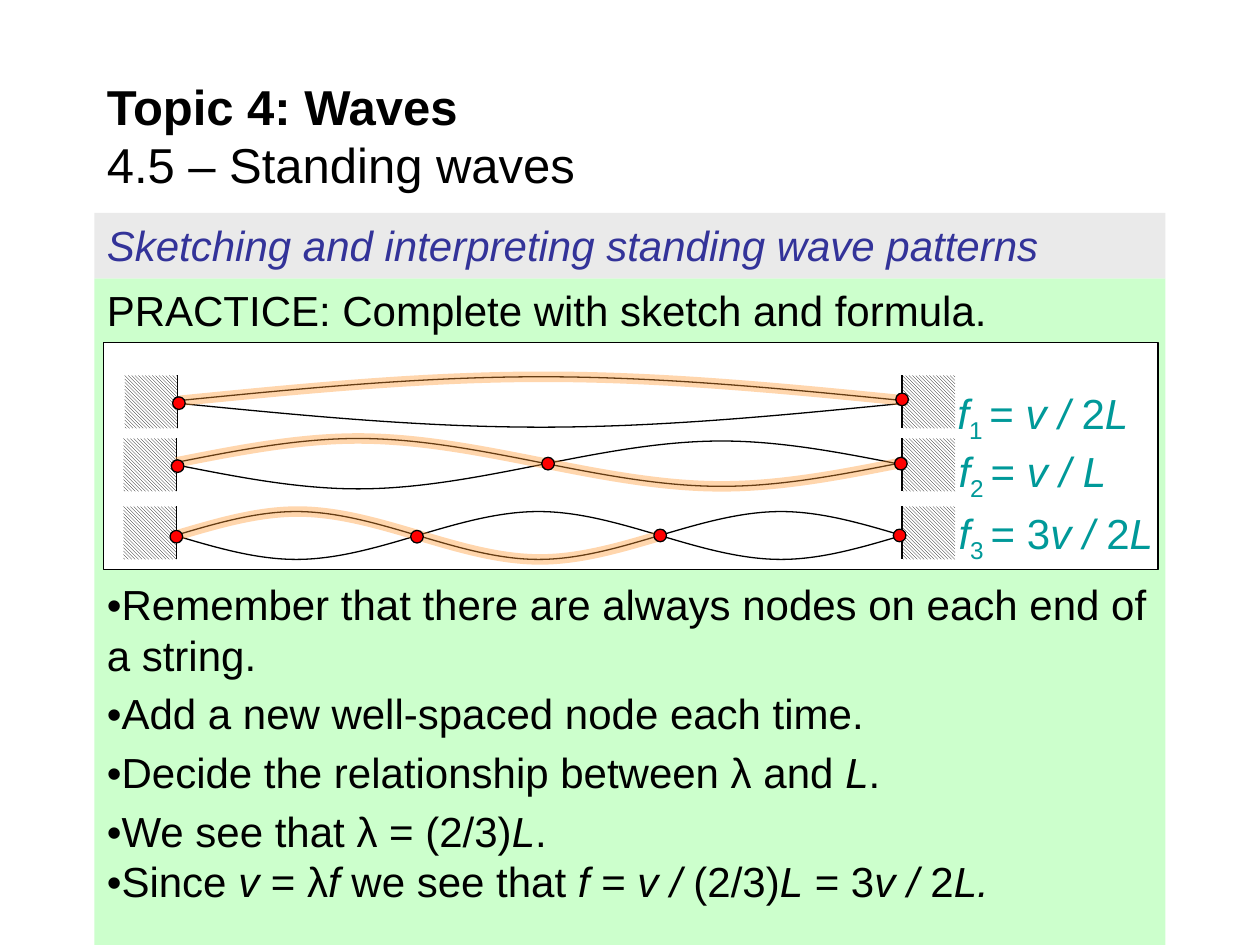
"""Build a physics practice slide on standing waves on a string."""
import lxml.etree
import pptx
import pptx.dml.color
import pptx.enum.dml
import pptx.enum.shapes
import pptx.enum.text
import pptx.oxml.ns
import pptx.util

Inches = pptx.util.Inches
Pt = pptx.util.Pt
qn = pptx.oxml.ns.qn

COLORS = {
    "black": "000000", "white": "FFFFFF", "green": "CCFFCC", "gray": "EAEAEA",
    "indigo": "333399", "teal": "009999", "orange": "FF9933", "red": "FF0000",
}
TITLE = [[("Topic 4: Waves", "b"), ("", "break"), ("4.5 – Standing waves", "")]]
HEADING = [[("Sketching and interpreting standing wave patterns", "i")]]
PRACTICE = [
    [("PRACTICE: Complete with sketch and formula.", "")],
    [("•Remember that there are always nodes on each end of a string.", "")],
    [("•Add a new well-spaced node each time.", "")],
    [("•Decide the relationship between λ and ", ""), ("L", "i"), (".", "")],
    [("•We see that λ = (2/3)", ""), ("L", "i"), (".", "")],
    [("•Since ", ""), ("v", "i"), (" = λ", ""), ("f", "i"), (" we see that ", ""),
     ("f", "i"), (" = ", ""), ("v / ", "i"), ("(2/3)", ""), ("L", "i"),
     (" = 3", ""), ("v / ", "i"), ("2", ""), ("L.", "i")],
]
PRACTICE_GAPS = [0, 139.2, 4.8, 4.8, 4.8, 0]
HARMONICS = [
    {"loops": 1, "marked": 1, "left": 1.41, "middle": (3.18, 3.2), "wall": 2.98,
     "wall_edge": 1.41, "shift": 0.02, "nodes": [(1.42, 3.2), (7.16, 3.17)],
     "place": (7.5, 3.02, 1.75, 0.5),
     "formula": [("f", "i"), ("1 ", "s"), ("= ", ""), ("v / ", "i"), ("2", ""), ("L", "i")]},
    {"loops": 2, "marked": 2, "left": 1.4, "middle": (3.67, 3.69), "wall": 3.48,
     "wall_edge": 1.4, "shift": 0, "nodes": [(1.41, 3.7), (4.35, 3.68), (7.15, 3.68)],
     "place": (7.51, 3.48, 1.57, 0.5),
     "formula": [("f", "i"), ("2 ", "s"), ("= ", ""), ("v / L", "i")]},
    {"loops": 3, "marked": 2, "left": 1.39, "middle": (4.25, 4.25), "wall": 4.02,
     "wall_edge": 1.4, "shift": 0.01,
     "nodes": [(1.4, 4.26), (3.31, 4.26), (5.24, 4.25), (7.14, 4.25)],
     "place": (7.51, 3.97, 1.57, 0.5),
     "formula": [("f", "i"), ("3 ", "s"), ("=", "")]},
]
ANSWER = [[("3", ""), ("v / ", "i"), ("2", ""), ("L", "i")]]
WAVE_WIDTH, AMPLITUDE = 5.77, 0.19
WALL_SIZE, RIGHT_EDGE, NODE_SIZE = 0.42, 7.16, 0.1


def rgb(name):
    return pptx.dml.color.RGBColor.from_string(COLORS[name])


def add_text(shape, lines, color="black", size=24, gaps=None, anchor="TOP",
             align="LEFT", inset=0.05):
    frame = shape.text_frame
    settings = {"word_wrap": True, "margin_top": Inches(inset),
                "vertical_anchor": getattr(pptx.enum.text.MSO_ANCHOR, anchor)}
    for name, value in settings.items():
        setattr(frame, name, value)
    for index, spans in enumerate(lines):
        para = frame.add_paragraph() if index else frame.paragraphs[0]
        layout = {"alignment": getattr(pptx.enum.text.PP_ALIGN, align),
                  "line_spacing": Pt(size * 1.2),
                  "space_before": Pt(gaps[index] if gaps else 0)}
        for name, value in layout.items():
            setattr(para, name, value)
        for text, style in spans:
            if style == "break":
                para.add_line_break()
                continue
            span = para.add_run()
            span.text = text
            font = {"name": "Arial", "size": Pt(size),
                    "bold": style == "b", "italic": style == "i"}
            for name, value in font.items():
                setattr(span.font, name, value)
            span.font.color.rgb = rgb(color)
            if style == "s":
                span.font._element.set("baseline", "-25000")


def add_text_box(page, place, lines, **options):
    box = page.shapes.add_textbox(*map(Inches, place))
    add_text(box, lines, **options)


def add_block(page, kind, place, fill, outlined=False):
    preset = getattr(pptx.enum.shapes.MSO_SHAPE, kind)
    shape = page.shapes.add_shape(preset, *map(Inches, place))
    shape.shadow.inherit = False
    shape.fill.solid()
    shape.fill.fore_color.rgb = rgb(fill)
    if outlined:
        shape.line.color.rgb = rgb("black")
        shape.line.width = Pt(0.75)
    else:
        shape.line.fill.background()
    return shape


def add_wall(page, left, top, edge):
    wall = add_block(page, "RECTANGLE", (left, top, WALL_SIZE, WALL_SIZE), "white")
    wall.fill.patterned()
    wall.fill.pattern = pptx.enum.dml.MSO_PATTERN.LIGHT_DOWNWARD_DIAGONAL
    wall.fill.fore_color.rgb = rgb("black")
    wall.fill.back_color.rgb = rgb("white")
    line = page.shapes.add_connector(
        pptx.enum.shapes.MSO_CONNECTOR.STRAIGHT,
        *map(Inches, (edge, top, edge, top + WALL_SIZE)))
    line.line.color.rgb = rgb("black")
    line.line.width = Pt(0.75)
    lxml.etree.SubElement(line._element.spPr, qn("a:effectLst"))


def round_segments(wave):
    segments = list(wave._element.iter(qn("a:lnTo")))
    points = [(int(point.get("x")), int(point.get("y")))
              for point in wave._element.iter(qn("a:pt"))]
    for index, segment in enumerate(segments):
        (x0, y0), (x1, y1) = points[index:index + 2]
        half = (y0 + y1) // 2
        first, second = (y0, half) if index % 2 else (half, y1)
        third = (x1 - x0) // 3
        curve = lxml.etree.Element(qn("a:cubicBezTo"))
        for x, y in ((x0 + third, first), (x1 - third, second), (x1, y1)):
            lxml.etree.SubElement(curve, qn("a:pt"), x=str(x), y=str(y))
        segment.getparent().replace(segment, curve)


def add_wave(page, left, middle, loops, total, sign, marker=False):
    points = []
    for quarter in range(2 * loops + 1):
        height = sign * AMPLITUDE * (0, 1, 0, -1)[quarter % 4]
        points.append((Inches(left + WAVE_WIDTH * quarter / (2 * total)),
                       Inches(middle - height)))
    builder = page.shapes.build_freeform(*points[0])
    builder.add_line_segments(points[1:], close=False)
    wave = builder.convert_to_shape()
    round_segments(wave)
    wave.shadow.inherit = False
    wave.fill.background()
    wave.line.color.rgb = rgb("orange" if marker else "black")
    wave.line.width = Pt(6 if marker else 0.75)
    if marker:
        color = wave.line._ln.find(".//" + qn("a:srgbClr"))
        lxml.etree.SubElement(color, qn("a:alpha")).set("val", "40000")


def add_harmonic(page, row):
    loops, left, edge = row["loops"], row["left"], row["wall_edge"]
    upper, lower = row["middle"]
    add_wall(page, edge - WALL_SIZE, row["wall"], edge)
    add_wall(page, RIGHT_EDGE, row["wall"], RIGHT_EDGE)
    add_wave(page, left, upper, loops, loops, 1)
    add_wave(page, left, lower, loops, loops, -1)
    add_wave(page, left + row["shift"], upper, row["marked"], loops, 1, marker=True)
    for x, y in row["nodes"]:
        place = (x - NODE_SIZE / 2, y - NODE_SIZE / 2, NODE_SIZE, NODE_SIZE)
        add_block(page, "OVAL", place, "red", outlined=True)
    add_text_box(page, row["place"], [row["formula"]], color="teal", inset=0.11)


def main():
    deck = pptx.Presentation()
    deck.slide_width, deck.slide_height = Inches(10), Inches(7.5)
    page = deck.slides.add_slide(deck.slide_layouts[6])
    practice = add_block(page, "RECTANGLE", (0.75, 2.21, 8.5, 5.29), "green")
    add_text(practice, PRACTICE, gaps=PRACTICE_GAPS)
    heading = add_block(page, "RECTANGLE", (0.75, 1.69, 8.5, 0.52), "gray")
    add_text(heading, HEADING, color="indigo")
    add_text_box(page, (0.75, 0.58, 8.5, 0.98), TITLE, size=28, anchor="MIDDLE")
    add_block(page, "RECTANGLE", (0.82, 2.72, 8.37, 1.8), "white", outlined=True)
    for row in HARMONICS:
        add_harmonic(page, row)
    add_text_box(page, (7.99, 3.98, 1.32, 0.5), ANSWER, color="teal", align="CENTER")
    deck.save("out.pptx")


if __name__ == "__main__":
    main()
